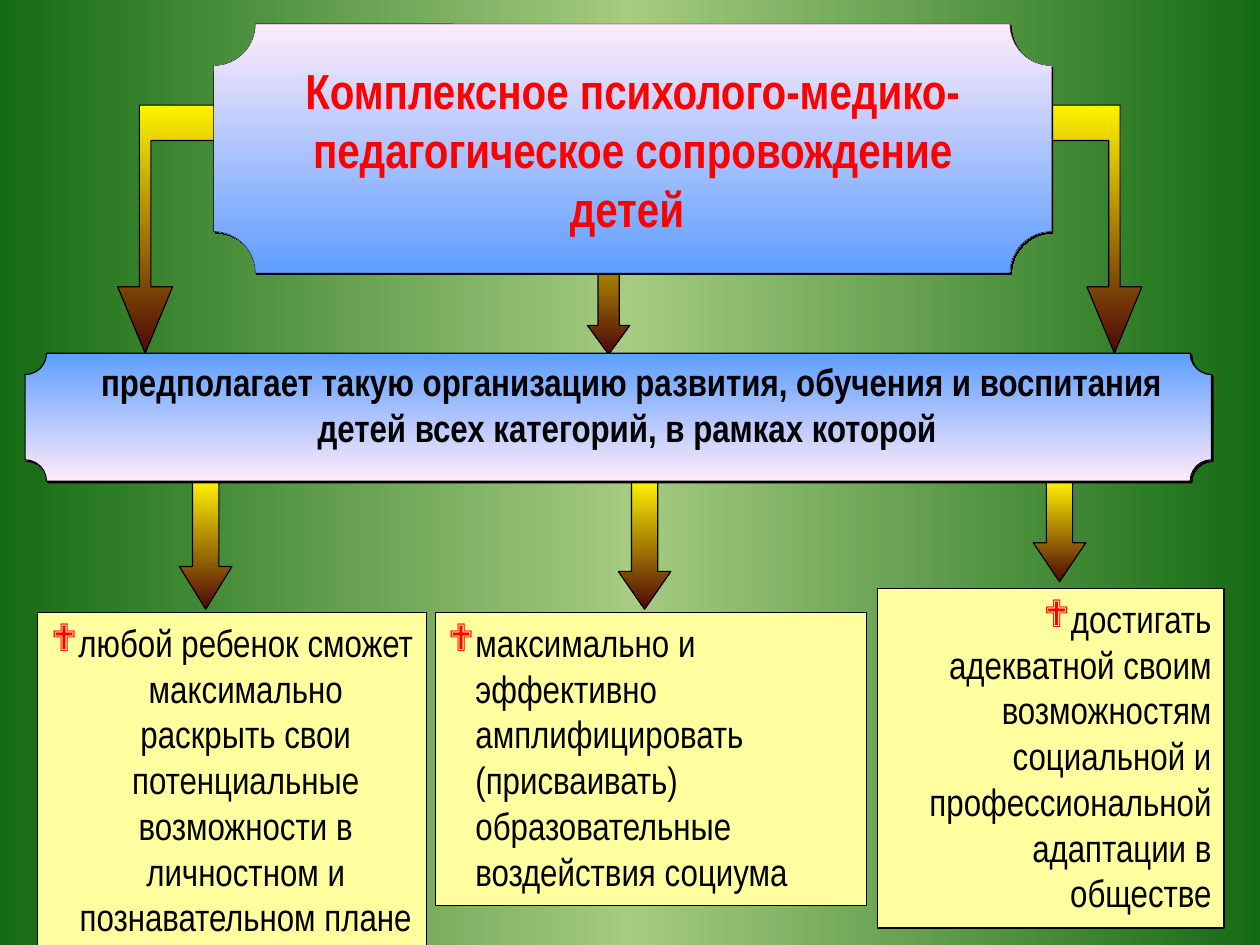
from copy import deepcopy
from dataclasses import dataclass

from lxml.etree import SubElement
from pptx import Presentation
from pptx.dml.color import RGBColor
from pptx.enum.shapes import MSO_SHAPE
from pptx.enum.text import MSO_ANCHOR, MSO_AUTO_SIZE, PP_ALIGN
from pptx.oxml.ns import qn
from pptx.util import Cm, Inches, Pt


@dataclass(frozen=True)
class Theme:
    font: str = "Arial Narrow"
    bullet_font: str = "Wingdings"
    title_size: int = 31
    body_size: int = 24
    black: str = "000000"
    red: str = "FF0000"
    card: str = "FFFF9F"
    arrow: tuple = ("FFF200", "4D0808")
    title_fill: tuple = ("FFEBFA", "5E9EFF")
    band_fill: tuple = ("5E9EFF", "FFEBFA")
    background: tuple = ("156B13", "A6CB81", "156B13")


THEME = Theme()


def rgb(color):
    return RGBColor.from_string(color)


def box_of(left, top, width, height):
    return [Inches(v) for v in (left, top, width, height)]


def paint(s, fill, line_width=0.75):
    """Fill with one colour, or top to bottom with a pair of colours."""
    if isinstance(fill, tuple):
        s.fill.gradient()
        s.fill.gradient_angle = 270
        for stop, color in zip(s.fill.gradient_stops, fill):
            stop.color.rgb = rgb(color)
    else:
        s.fill.solid()
        s.fill.fore_color.rgb = rgb(fill)
    s.line.color.rgb = rgb(THEME.black)
    s.line.width = Pt(line_width)
    s.shadow.inherit = False


def write(s, text, size, color, align, bold=False, anchor=MSO_ANCHOR.TOP,
          inset=(0.11, 0.06), bullet=False):
    tf = s.text_frame
    tf.word_wrap = True
    tf.auto_size = MSO_AUTO_SIZE.NONE
    tf.vertical_anchor = anchor
    tf.margin_left = tf.margin_right = Inches(inset[0])
    tf.margin_top = tf.margin_bottom = Inches(inset[1])
    tf.text = text
    p = tf.paragraphs[0]
    p.alignment = align
    if bullet:
        add_bullet(p)
    font = p.runs[0].font
    font.name, font.size, font.bold = THEME.font, Pt(size), bold
    font.color.rgb = rgb(color)


def add_bullet(p):
    pPr = p._p.get_or_add_pPr()
    pPr.set("marL", str(Inches(0.24)))
    pPr.set("indent", str(-Inches(0.24)))
    clr = SubElement(pPr, qn("a:buClr"))
    SubElement(clr, qn("a:srgbClr"), val=THEME.red)
    SubElement(pPr, qn("a:buFont"), typeface=THEME.bullet_font, charset="2")
    SubElement(pPr, qn("a:buChar"), char="❖")


def add_background(slide):
    fill = slide.background.fill
    fill.gradient()
    first = next(slide._element.iter(qn("a:gs")))
    middle = deepcopy(first)
    middle.set("pos", "50000")
    first.addnext(middle)
    fill.gradient_angle = 0
    for stop, color in zip(fill.gradient_stops, THEME.background):
        stop.color.rgb = rgb(color)


def add_plaque(slide, box, fill, line_width):
    s = slide.shapes.add_shape(MSO_SHAPE.PLAQUE, *box_of(*box))
    s.adjustments[0] = 0.167
    paint(s, fill, line_width)
    effects = s._element.spPr.find(qn("a:effectLst"))
    shadow = SubElement(effects, qn("a:outerShdw"), dist=str(Pt(1.4)),
                        dir="2700000", algn="ctr", rotWithShape="0")
    SubElement(shadow, qn("a:srgbClr"), val=THEME.black)


def add_title(slide, box, text):
    left, top, width, height = box
    add_plaque(slide, box, THEME.title_fill, 0.25)
    pad = 0.26
    title = slide.shapes.title
    title.left, title.top, title.width, title.height = box_of(
        left + pad, top + pad, width - 2 * pad, height - 2 * pad)
    slide.shapes._spTree.append(title._element)  # bring in front of the plaque
    write(title, text, THEME.title_size, THEME.red, PP_ALIGN.CENTER,
          bold=True, anchor=MSO_ANCHOR.MIDDLE)


def add_band(slide, box, text):
    left, top, width, height = box
    add_plaque(slide, box, THEME.band_fill, 0.75)
    s = slide.shapes.add_textbox(
        *box_of(left + 0.37, top, width - 0.51, height - 0.21))
    write(s, text, THEME.body_size, THEME.black, PP_ALIGN.CENTER,
          bold=True, inset=(0.1, 0.05))


def add_card(slide, box, text, align):
    s = slide.shapes.add_shape(MSO_SHAPE.RECTANGLE, *box_of(*box))
    paint(s, THEME.card)
    write(s, text, THEME.body_size, THEME.black, align, bullet=True)


def add_down_arrow(slide, box, head):
    s = slide.shapes.add_shape(MSO_SHAPE.DOWN_ARROW, *box_of(*box))
    s.adjustments[0], s.adjustments[1] = 0.5, head
    paint(s, THEME.arrow)


def add_elbow_arrow(slide, tip, top, side):
    """Bent arrow with its tip at x = tip; side is 1 on the right, -1 on the left."""
    outline = [(0, 2.17), (-0.24, 1.59), (-0.05, 1.59), (-0.05, 0.31),
               (-0.65, 0.31), (-0.65, 0), (0.05, 0), (0.05, 1.59), (0.24, 1.59)]
    points = [(Inches(tip + side * x), Inches(top + y)) for x, y in outline]
    builder = slide.shapes.build_freeform(*points[0])
    builder.add_line_segments(points[1:], close=True)
    paint(builder.convert_to_shape(), THEME.arrow)


def main():
    prs = Presentation()
    prs.slide_width, prs.slide_height = Cm(28), Cm(21)
    slide = prs.slides.add_slide(prs.slide_layouts[5])
    add_background(slide)

    # Arrows from the title to the band
    add_down_arrow(slide, (5.14, 1.75, 0.37, 1.35), 0.683)
    for tip, side in ((9.75, 1), (1.27, -1)):
        add_elbow_arrow(slide, tip, 0.92, side)

    # Arrows from the band to the cards
    for left, height, head in ((1.57, 1.12, 0.813), (5.41, 1.12, 0.719),
                               (9.04, 0.88, 0.743)):
        add_down_arrow(slide, (left, 4.21, 0.46, height), head)

    # Cards
    cards = [
        ((0.33, 5.36, 3.4, 2.97), PP_ALIGN.CENTER,
         "любой ребенок сможет максимально раскрыть свои потенциальные "
         "возможности в личностном и познавательном плане"),
        ((3.81, 5.36, 3.77, 2.56), PP_ALIGN.LEFT,
         "максимально и эффективно амплифицировать (присваивать) "
         "образовательные воздействия социума"),
        ((7.68, 5.15, 3.03, 2.97), PP_ALIGN.RIGHT,
         "достигать адекватной своим возможностям социальной и "
         "профессиональной адаптации в обществе"),
    ]
    for box, align, text in cards:
        add_card(slide, box, text, align)

    # Title and band
    add_title(slide, (1.87, 0.21, 7.33, 2.18),
              "Комплексное психолого-медико-педагогическое сопровождение детей ")
    add_band(slide, (0.22, 3.09, 10.38, 1.12),
             "предполагает такую организацию развития, обучения и воспитания "
             "детей всех категорий, в рамках которой ")
    prs.save("out.pptx")


if __name__ == "__main__":
    main()
